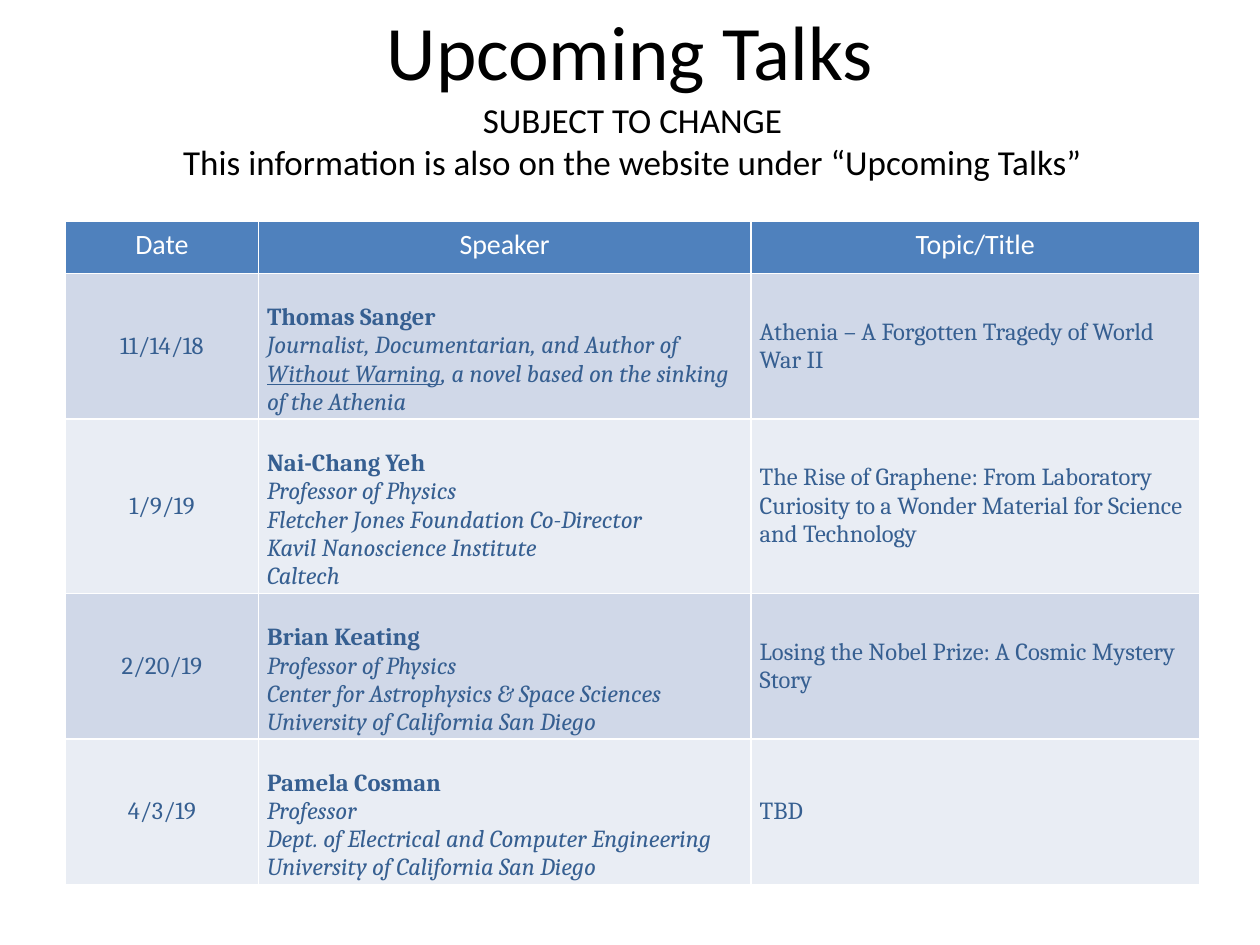
from pptx import Presentation
from pptx.dml.color import RGBColor
from pptx.enum.text import MSO_ANCHOR as Anchor, PP_ALIGN as Align
from pptx.util import Inches, Pt

HEADERS = ["Date", "Speaker", "Topic/Title"]
COLUMN_WIDTHS = [1.53, 3.91, 3.56]
HEADER_HEIGHT = 0.41
LINE_HEIGHT = 0.22
BAND_FILLS = ["D0D8E8", "E9EDF4"]

# Each talk: date, speaker, description paragraphs (lists of text runs), topic, lines shown.
UNDERLINED = "Without Warning"
TALKS = [
    ("11/14/18", "Thomas Sanger",
     [["Journalist, Documentarian, and Author of ", UNDERLINED,
       ", a novel based on the sinking of the Athenia"]],
     "Athenia – A Forgotten Tragedy of World War II", 4),
    ("1/9/19", "Nai-Chang Yeh",
     [["Professor of Physics"], ["Fletcher Jones Foundation Co-Director"],
      ["Kavil Nanoscience Institute"], ["Caltech"]],
     "The Rise of Graphene: From Laboratory Curiosity to a Wonder Material "
     "for Science and Technology", 5),
    ("2/20/19", "Brian Keating",
     [["Professor of Physics"], ["Center for Astrophysics & Space Sciences"],
      ["University of California San Diego"]],
     "Losing the Nobel Prize: A Cosmic Mystery Story", 4),
    ("4/3/19", "Pamela Cosman",
     [["Professor"], ["Dept. of Electrical and Computer Engineering"],
      ["University of California San Diego"]],
     "TBD", 4),
]


def color(value):
    return RGBColor.from_string(value)


def style(paragraph, size, font_name, font_color, align=Align.LEFT, bold=False, italic=False):
    paragraph.alignment = align
    font = paragraph.font
    font.size, font.name = Pt(size), font_name
    font.bold, font.italic = bold, italic
    font.color.rgb = color(font_color)


def add_centered_text(slide, lines, size, left, top, width, height, anchor=Anchor.TOP):
    frame = slide.shapes.add_textbox(
        Inches(left), Inches(top), Inches(width), Inches(height)).text_frame
    frame.word_wrap = True
    frame.vertical_anchor = anchor
    frame.text = "\n".join(lines)
    for paragraph in frame.paragraphs:
        style(paragraph, size, "Calibri", "000000", Align.CENTER)


def fill_cell(cell, fill):
    cell.fill.solid()
    cell.fill.fore_color.rgb = color(fill)


def write_body_cell(cell, paragraphs, fill, align=Align.LEFT, speaker=False):
    """Write lists of runs; a speaker cell has a bold name, then italic lines."""
    fill_cell(cell, fill)
    cell.vertical_anchor = Anchor.MIDDLE
    cell.margin_left = cell.margin_right = Inches(0.07)
    cell.margin_top = Inches(LINE_HEIGHT if speaker else 0)
    cell.margin_bottom = 0
    frame = cell.text_frame
    for index, runs in enumerate(paragraphs):
        paragraph = frame.add_paragraph() if index else frame.paragraphs[0]
        style(paragraph, 14, "Cambria", "365F91", align,
              bold=speaker and index == 0, italic=speaker and index > 0)
        for text in runs:
            run = paragraph.add_run()
            run.text = text
            if text == UNDERLINED:
                run.font.underline = True


def add_talks_table(slide, left, top, width, height):
    table = slide.shapes.add_table(
        len(TALKS) + 1, len(HEADERS),
        Inches(left), Inches(top), Inches(width), Inches(height)).table
    for column, column_width in zip(table.columns, COLUMN_WIDTHS):
        column.width = Inches(column_width)

    table.rows[0].height = Inches(HEADER_HEIGHT)
    for cell, header in zip(table.rows[0].cells, HEADERS):
        fill_cell(cell, "4F81BD")
        cell.text = header
        style(cell.text_frame.paragraphs[0], 16, "Calibri", "FFFFFF", Align.CENTER)

    for index, (date, name, description, topic, line_count) in enumerate(TALKS):
        row = table.rows[index + 1]
        row.height = Inches(LINE_HEIGHT * (line_count + 1) + 0.02)
        fill = BAND_FILLS[index % 2]
        date_cell, speaker_cell, topic_cell = row.cells
        write_body_cell(date_cell, [[date]], fill, Align.CENTER)
        write_body_cell(speaker_cell, [[name]] + description, fill, speaker=True)
        write_body_cell(topic_cell, [[topic]], fill)


def main():
    presentation = Presentation()
    presentation.slide_width, presentation.slide_height = Inches(10), Inches(7.5)
    slide = presentation.slides.add_slide(presentation.slide_layouts[6])
    add_centered_text(slide, ["Upcoming Talks"], 44, 0, -0.23, 10, 1.25, Anchor.MIDDLE)
    add_talks_table(slide, 0.52, 1.76, 9, 5.11)
    add_centered_text(
        slide,
        ["SUBJECT TO CHANGE", "This information is also on the website under “Upcoming Talks”"],
        20, 0.52, 0.73, 9, 0.77)
    presentation.save("out.pptx")


if __name__ == "__main__":
    main()
